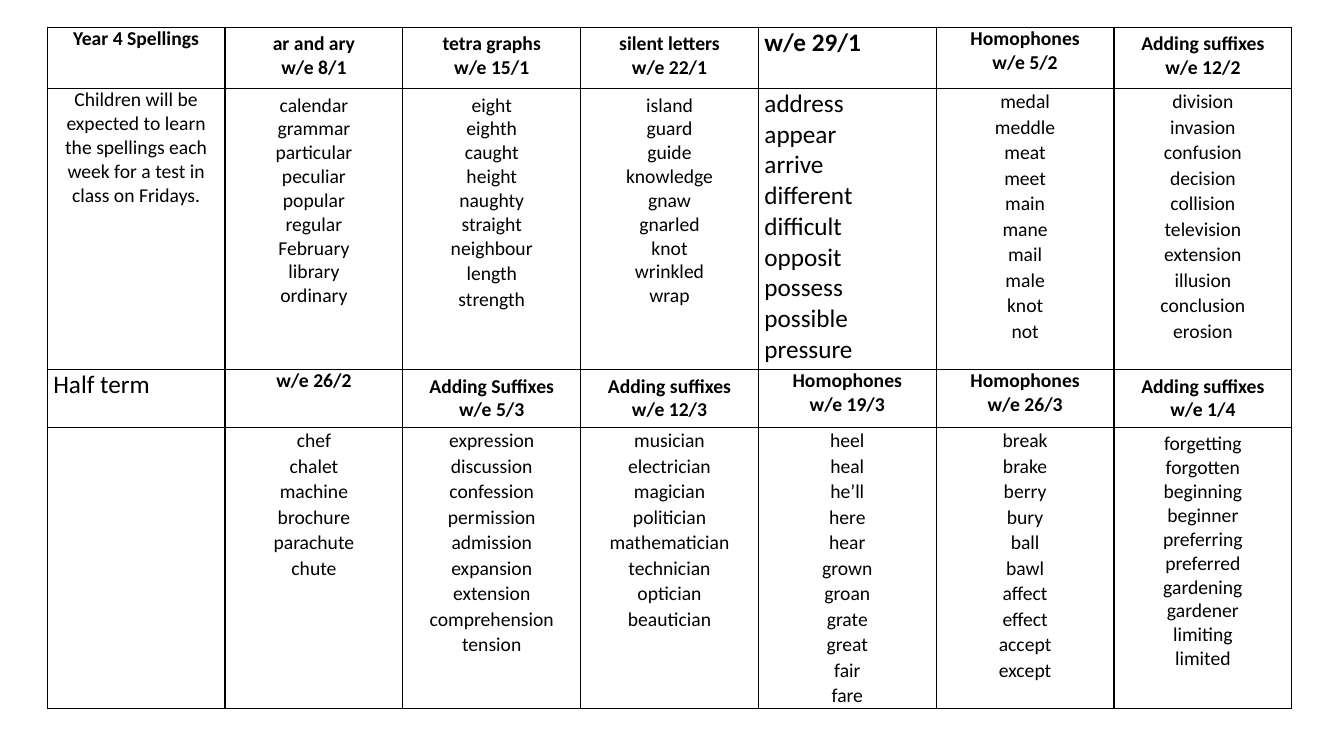
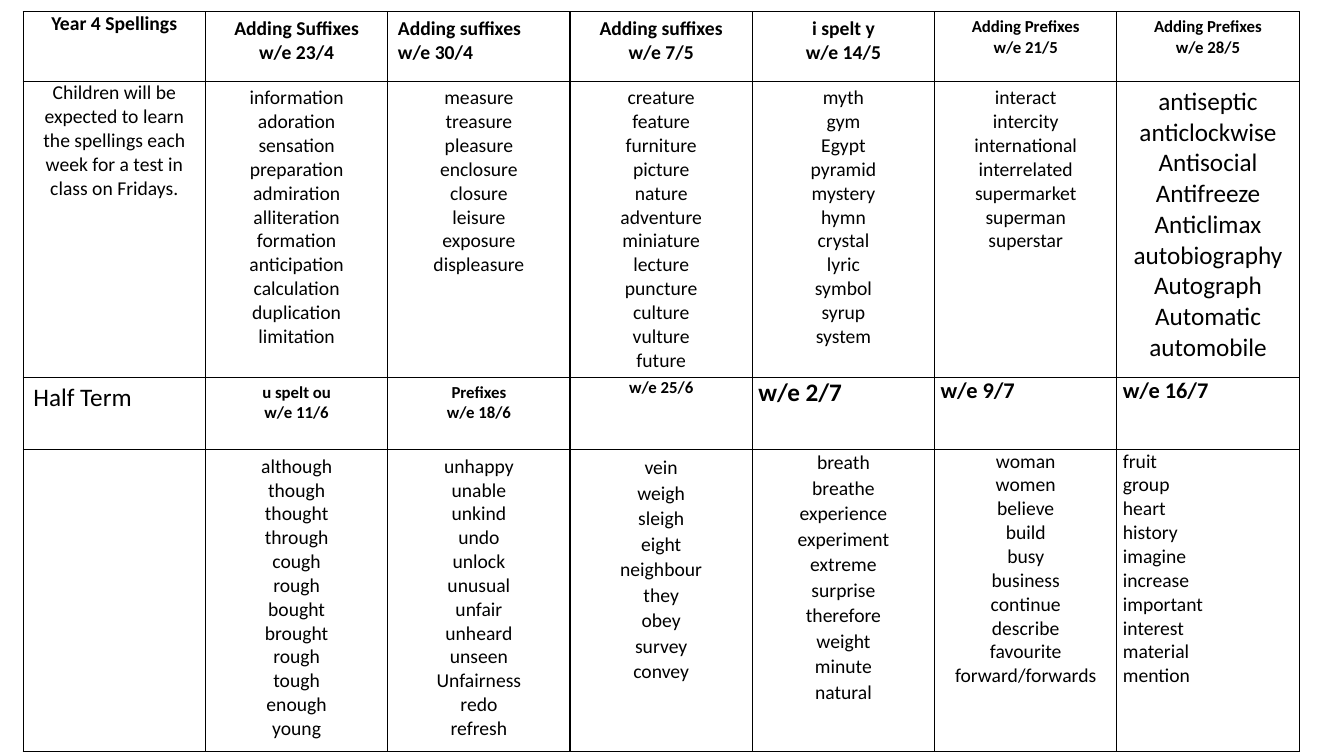
"""Builds two slides of weekly Year 4 spelling lists, one table on each."""
from collections import namedtuple

from lxml import etree
from pptx import Presentation
from pptx.dml.color import RGBColor
from pptx.enum.text import MSO_ANCHOR, PP_ALIGN
from pptx.oxml.ns import qn
from pptx.util import Pt

LEFT, CENTER = PP_ALIGN.LEFT, PP_ALIGN.CENTER
TOP = MSO_ANCHOR.TOP
FONT, INK, PAPER = "Calibri", "000000", "FFFFFF"
BORDER = Pt(1)
LOOSE = 1.07

Style = namedtuple("Style", "size bold align inset_x inset_y spacing")
HEAD = Style(14, True, CENTER, 7.2, 3.6, 1)
HEAD_SMALL = HEAD._replace(size=12)
HEAD_LEFT = HEAD._replace(align=LEFT)
HEAD_TIGHT = HEAD._replace(inset_x=4.3, inset_y=0)
HEAD_TIGHT_SMALL = HEAD_TIGHT._replace(size=12)
DATE_LARGE = HEAD_TIGHT._replace(size=18, align=LEFT)
DATE_MEDIUM = DATE_LARGE._replace(size=16)
TERM = HEAD_LEFT._replace(size=18, bold=False)
TERM_TIGHT = DATE_LARGE._replace(bold=False)
WORDS = HEAD._replace(bold=False)
WORDS_LARGE = WORDS._replace(size=18)
WORDS_LOOSE = WORDS._replace(spacing=LOOSE)
WORDS_TIGHT = HEAD_TIGHT._replace(bold=False)
WORDS_TIGHT_LOOSE = WORDS_TIGHT._replace(spacing=LOOSE)
WORDS_LEFT = WORDS_TIGHT._replace(align=LEFT)

TITLE = (HEAD_TIGHT, "Year 4 Spellings")
INTRO = (WORDS_TIGHT, "Children will be expected to learn the spellings "
                      "each week for a test in class on Fridays.")
EMPTY = (WORDS, "")

SPRING = [
    [
        TITLE,
        (HEAD, "ar and ary|w/e 8/1"),
        (HEAD, "tetra graphs|w/e 15/1"),
        (HEAD, "silent letters|w/e 22/1"),
        (DATE_LARGE, "w/e 29/1"),
        (HEAD_TIGHT, "Homophones|w/e 5/2"),
        (HEAD, "Adding suffixes|w/e 12/2"),
    ],
    [
        INTRO,
        (WORDS, "calendar|grammar|particular|peculiar|popular|regular|"
                "February|library|ordinary"),
        (WORDS, "eight|eighth|caught|height|naughty|straight|neighbour",
         "length|strength"),
        (WORDS, "island|guard|guide|knowledge|gnaw|gnarled|knot|wrinkled|wrap"),
        (TERM_TIGHT, "address|appear|arrive|different|difficult|opposit|"
                     "possess|possible|pressure"),
        (WORDS_TIGHT_LOOSE, "medal|meddle|meat|meet|main|mane|mail|male|knot|not"),
        (WORDS_TIGHT_LOOSE, "division|invasion|confusion|decision|collision|"
                            "television|extension|illusion|conclusion|erosion"),
    ],
    [
        (TERM_TIGHT, "Half term"),
        (HEAD_TIGHT, "w/e 26/2"),
        (HEAD, "Adding Suffixes|w/e 5/3"),
        (HEAD, "Adding suffixes|w/e 12/3"),
        (HEAD_TIGHT, "Homophones|w/e 19/3"),
        (HEAD_TIGHT, "Homophones|w/e 26/3"),
        (HEAD, "Adding suffixes|w/e 1/4"),
    ],
    [
        EMPTY,
        (WORDS_TIGHT_LOOSE, "chef|chalet|machine|brochure|parachute|chute"),
        (WORDS_TIGHT_LOOSE, "expression|discussion|confession|permission|"
                            "admission|expansion|extension|comprehension|tension"),
        (WORDS_TIGHT_LOOSE, "musician|electrician|magician|politician|"
                            "mathematician|technician|optician|beautician"),
        (WORDS_TIGHT_LOOSE, "heel|heal|he’ll|here|hear|grown|groan|grate|"
                            "great|fair|fare"),
        (WORDS_TIGHT_LOOSE, "break|brake|berry|bury|ball|bawl|affect|effect|"
                            "accept|except"),
        (WORDS, "forgetting|forgotten|beginning|beginner|preferring|preferred|"
                "gardening|gardener|limiting|limited"),
    ],
]

SUMMER = [
    [
        TITLE,
        (HEAD, "Adding Suffixes|w/e 23/4"),
        (HEAD_LEFT, "Adding suffixes|w/e 30/4"),
        (HEAD, "Adding suffixes|w/e 7/5"),
        (HEAD, "i spelt y|w/e 14/5"),
        (HEAD_SMALL, "Adding Prefixes|w/e 21/5"),
        (HEAD_SMALL, "Adding Prefixes|w/e 28/5"),
    ],
    [
        INTRO,
        (WORDS, "information|adoration|sensation|preparation|admiration|"
                "alliteration|formation|anticipation|calculation|duplication|"
                "limitation"),
        (WORDS, "measure|treasure|pleasure|enclosure|closure|leisure|exposure|"
                "displeasure"),
        (WORDS, "creature|feature|furniture|picture|nature|adventure|miniature|"
                "lecture|puncture|culture|vulture|future"),
        (WORDS, "myth|gym|Egypt|pyramid|mystery|hymn|crystal|lyric|symbol|"
                "syrup|system"),
        (WORDS, "interact|intercity|international|interrelated|supermarket|"
                "superman|superstar"),
        (WORDS_LARGE, "antiseptic|anticlockwise|Antisocial|Antifreeze|Anticlimax|"
                      "autobiography|Autograph|Automatic|automobile"),
    ],
    [
        (TERM, "Half Term"),
        (HEAD_SMALL, "u spelt ou|w/e 11/6"),
        (HEAD_SMALL, "Prefixes|w/e 18/6"),
        (HEAD_TIGHT_SMALL, "w/e 25/6"),
        (DATE_LARGE, "w/e 2/7"),
        (DATE_MEDIUM, "w/e 9/7"),
        (DATE_MEDIUM, "w/e 16/7"),
    ],
    [
        EMPTY,
        (WORDS, "although|though|thought|through|cough|rough|bought|brought|"
                "rough|tough|enough|young"),
        (WORDS, "unhappy|unable|unkind|undo|unlock|unusual|unfair|unheard|"
                "unseen|Unfairness|redo|refresh"),
        (WORDS_LOOSE, "vein|weigh|sleigh|eight|neighbour|they|obey|survey|convey"),
        (WORDS_TIGHT_LOOSE, "breath|breathe|experience|experiment|extreme|"
                            "surprise|therefore|weight|minute|natural"),
        (WORDS_TIGHT, "woman|women|believe|build|busy|business|continue|"
                      "describe|favourite|forward/forwards"),
        (WORDS_LEFT, "fruit|group|heart|history|imagine|increase|important|"
                     "interest|material|mention"),
    ],
]

SLIDES = [
    {"rows": SPRING, "left": 33.8, "top": 19.5, "column": 127,
     "heights": [43.6, 200.7, 41.4, 200.7]},
    {"rows": SUMMER, "left": 16.6, "top": 8.3, "column": 130.2,
     "heights": [49.7, 211.6, 51.4, 216]},
]


def color(value):
    return RGBColor.from_string(value)


def add_borders(cell):
    props = cell._tc.get_or_add_tcPr()
    for side in ("lnL", "lnR", "lnT", "lnB"):
        line = etree.SubElement(props, qn("a:" + side), w=str(BORDER))
        fill = etree.SubElement(line, qn("a:solidFill"))
        etree.SubElement(fill, qn("a:srgbClr"), val=INK)


def add_line(p, text, style):
    p.alignment = style.align
    p.line_spacing = style.spacing
    r = p.add_run()
    r.text = text
    r.font.name = FONT
    r.font.size = Pt(style.size)
    r.font.bold = style.bold
    r.font.color.rgb = color(INK)


def fill_cell(cell, style, text, loose_tail=""):
    add_borders(cell)
    cell.fill.solid()
    cell.fill.fore_color.rgb = color(PAPER)
    cell.vertical_anchor = TOP
    cell.margin_left = cell.margin_right = Pt(style.inset_x)
    cell.margin_top = cell.margin_bottom = Pt(style.inset_y)
    lines = [(line, style) for line in text.split("|") if line]
    loose = style._replace(spacing=LOOSE)
    lines += [(line, loose) for line in loose_tail.split("|") if line]
    tf = cell.text_frame
    for i, (line, line_style) in enumerate(lines):
        add_line(tf.add_paragraph() if i else tf.paragraphs[0], line, line_style)


def add_spellings(prs, rows, left, top, column, heights):
    s = prs.slides.add_slide(prs.slide_layouts[6])
    columns = len(rows[0])
    table = s.shapes.add_table(len(rows), columns, Pt(left), Pt(top),
                               Pt(column * columns), Pt(sum(heights))).table
    table.first_row = table.horz_banding = False
    for table_column in table.columns:
        table_column.width = Pt(column)
    for i, (row, height) in enumerate(zip(rows, heights)):
        table.rows[i].height = Pt(height)
        for j, content in enumerate(row):
            fill_cell(table.cell(i, j), *content)


def main():
    prs = Presentation()
    prs.slide_width, prs.slide_height = Pt(960), Pt(540)
    for slide in SLIDES:
        add_spellings(prs, **slide)
    prs.save("out.pptx")


if __name__ == "__main__":
    main()
